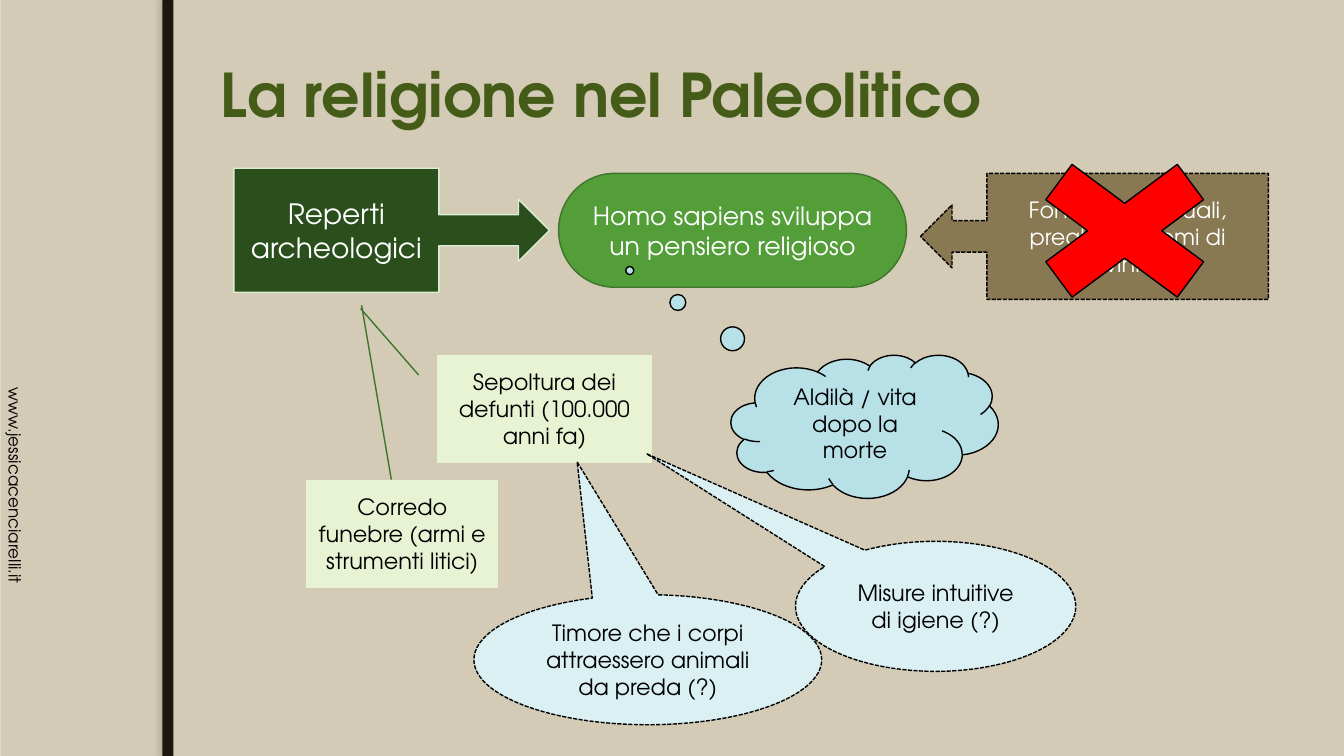
from dataclasses import dataclass

from lxml.etree import SubElement
from pptx import Presentation
from pptx.dml.color import RGBColor
from pptx.enum.dml import MSO_LINE
from pptx.enum.shapes import MSO_SHAPE
from pptx.enum.text import MSO_ANCHOR, MSO_AUTO_SIZE, PP_ALIGN
from pptx.oxml.ns import qn
from pptx.util import Inches, Pt


@dataclass(frozen=True)
class Theme:
    font: str = "TeX Gyre Adventor"
    page: str = "E3DED1"
    panel: str = "D3CBB6"
    bar: str = "1B1810"
    bar_shadow: str = "716E67"
    title: str = "455C19"
    dark_green: str = "2A4F1C"
    green: str = "549E39"
    outline_green: str = "3E752A"
    pale_outline: str = "DBEFD4"
    pale_green: str = "E8F3D4"
    brown: str = "887952"
    red: str = "FF0000"
    cloud: str = "B7E1E7"
    bubble: str = "DBF0F3"
    black: str = "000000"
    white: str = "FFFFFF"
    title_size: int = 43
    finds_size: int = 20
    idea_size: int = 18
    body_size: int = 16
    address_size: int = 12


theme = Theme()


def style_text(shape, text, size, color, align=PP_ALIGN.CENTER, bold=False):
    frame = shape.text_frame
    frame.word_wrap = True
    frame.vertical_anchor = MSO_ANCHOR.MIDDLE
    paragraph = frame.paragraphs[0]
    paragraph.text = text
    paragraph.alignment = align
    font = paragraph.font
    font.name, font.size, font.bold = theme.font, Pt(size), bold
    font.color.rgb = RGBColor.from_string(color)


def add_box(preset, place, fill, outline=None, dashed=False, adjustments=()):
    shape = page.shapes.add_shape(preset, *(Inches(length) for length in place))
    shape.shadow.inherit = False
    shape.fill.solid()
    shape.fill.fore_color.rgb = RGBColor.from_string(fill)
    if outline:
        shape.line.color.rgb = RGBColor.from_string(outline)
        shape.line.width = Pt(1)
        if dashed:
            shape.line.dash_style = MSO_LINE.SQUARE_DOT
    else:
        shape.line.fill.background()
    for index, value in enumerate(adjustments):
        shape.adjustments[index] = value
    return shape


deck = Presentation()
deck.slide_width, deck.slide_height = Inches(13.33), Inches(7.5)
page = deck.slides.add_slide(deck.slide_layouts[5])

# Background and side bar
page.background.fill.solid()
page.background.fill.fore_color.rgb = RGBColor.from_string(theme.page)
add_box(MSO_SHAPE.RECTANGLE, (0.01, 0, 13.33, 7.5), theme.panel)
bar = add_box(MSO_SHAPE.RECTANGLE, (1.61, 0, 0.11, 7.5), theme.bar)
effects = bar._element.spPr.find(qn("a:effectLst"))
shadow = SubElement(effects, qn("a:outerShdw"), blurRad=str(Pt(3)),
                    dist=str(Pt(3)), dir="10800000", rotWithShape="0")
shadow_color = SubElement(shadow, qn("a:srgbClr"), val=theme.bar_shadow)
SubElement(shadow_color, qn("a:alpha"), val="25000")

# Vertical web address
address = page.shapes.add_textbox(Inches(-0.99), Inches(4.74), Inches(2.28), Inches(0.3))
address.rotation = 90
style_text(address, "www.jessicacenciarelli.it", theme.address_size, theme.black, PP_ALIGN.LEFT)
address.text_frame.vertical_anchor = MSO_ANCHOR.TOP

# Title, raised above the background panel
title = page.shapes.title
title.left, title.top = Inches(2.09), Inches(0.3)
title.width, title.height = Inches(10.93), Inches(1.25)
style_text(title, "La religione nel Paleolitico", theme.title_size, theme.title,
           PP_ALIGN.LEFT, bold=True)
title.text_frame.auto_size = MSO_AUTO_SIZE.NONE
page.shapes._spTree.append(title._element)

# Sources leading to religious thought
finds = add_box(MSO_SHAPE.RIGHT_ARROW_CALLOUT, (2.32, 1.67, 3.13, 1.23),
                theme.dark_green, theme.pale_outline)
style_text(finds, "Reperti archeologici", theme.finds_size, theme.white)
idea = add_box(MSO_SHAPE.FLOWCHART_TERMINATOR, (5.54, 1.72, 3.45, 1.13),
               theme.green, theme.outline_green)
style_text(idea, "Homo sapiens sviluppa un pensiero religioso", theme.idea_size, theme.white)
writings = add_box(MSO_SHAPE.LEFT_ARROW_CALLOUT, (9.13, 1.72, 3.45, 1.25), theme.brown,
                   theme.black, True, (0.25, 0.25, 0.25, 0.809))
style_text(writings, "Fonti scritte (rituali, preghiere, nomi di divinità)",
           theme.body_size, theme.white)
add_box(MSO_SHAPE.MATH_MULTIPLY, (9.9, 1.36, 2.51, 1.86), theme.red, theme.black)

# Evidence and interpretations
note, oval = MSO_SHAPE.LINE_CALLOUT_1_NO_BORDER, MSO_SHAPE.OVAL_CALLOUT
callouts = [
    (note, (4.33, 3.52, 2.14, 1.07), theme.pale_green, theme.outline_green, False,
     (0.188, -0.083, -0.429, -0.352), "Sepoltura dei defunti (100.000 anni fa)"),
    (note, (3.04, 4.76, 1.9, 1.07), theme.pale_green, theme.outline_green, False,
     (-0.002, 0.443, -1.618, 0.288), "Corredo funebre (armi e strumenti litici)"),
    (MSO_SHAPE.CLOUD_CALLOUT, (7.25, 3.52, 2.65, 1.42), theme.cloud, theme.black, False,
     (-0.879, -1.089), "Aldilà / vita dopo la morte"),
    (oval, (7.89, 5.37, 2.78, 1.29), theme.bubble, theme.black, True,
     (-1.031, -1.173), "Misure intuitive di igiene (?)"),
    (oval, (4.7, 5.9, 3.45, 1.29), theme.bubble, theme.black, True,
     (-0.203, -1.521), "Timore che i corpi attraessero animali da preda (?)"),
]
for preset, place, fill, outline, dashed, adjustments, text in callouts:
    callout = add_box(preset, place, fill, outline, dashed, adjustments)
    style_text(callout, text, theme.body_size, theme.black)

deck.save("out.pptx")
